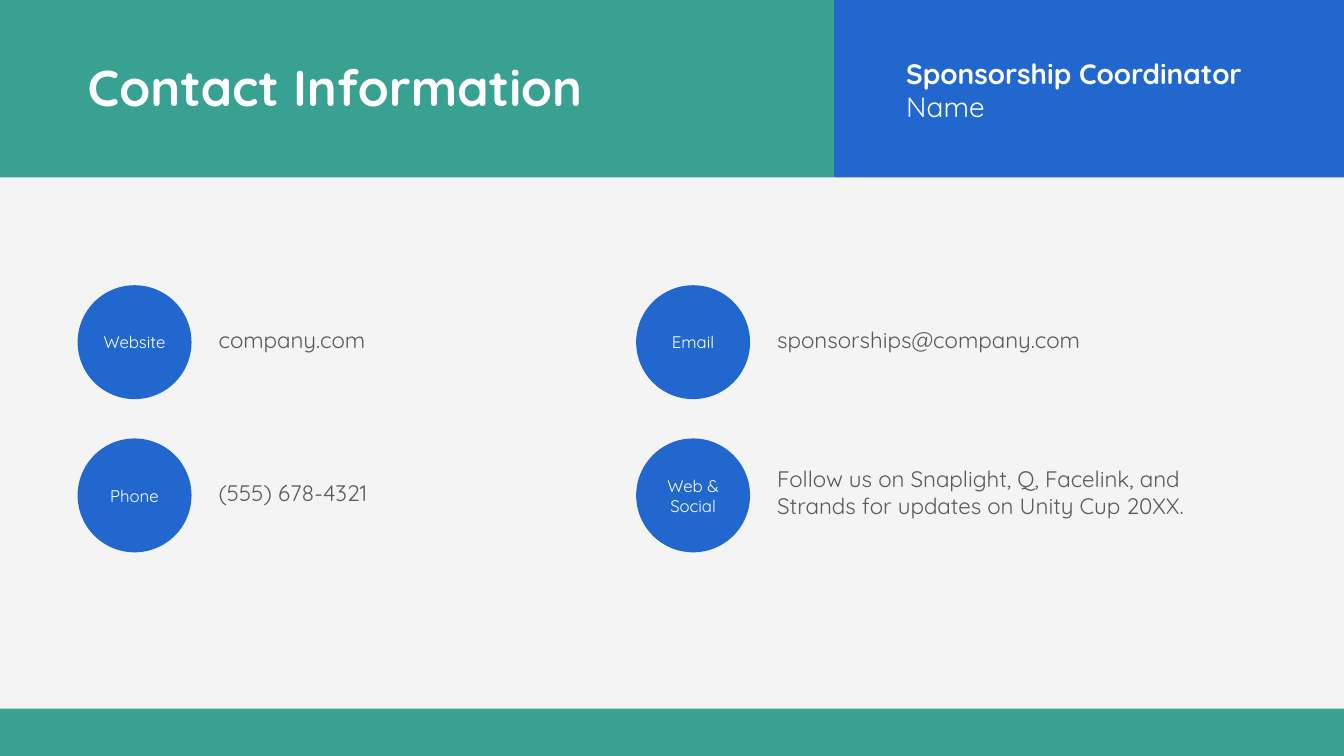
import pptx
import pptx.util
import pptx.dml.color
import pptx.enum.shapes
import pptx.enum.text
from dataclasses import dataclass

Inches = pptx.util.Inches
Shape = pptx.enum.shapes.MSO_SHAPE
Align = pptx.enum.text.PP_ALIGN
Anchor = pptx.enum.text.MSO_ANCHOR

TITLE = "Contact Information"
COORDINATOR = ["Sponsorship Coordinator", "Name"]
# label, detail, detail width; one inner list per row
CONTACTS = [
    [("Website", "company.com", 3.56),
     ("Email", "sponsorships@company.com", 5.16)],
    [("Phone", "(555) 678-4321", 2.71),
     ("Web & Social", "Follow us on Snaplight, Q, Facelink, and "
      "Strands for updates on Unity Cup 20XX.", 4.8)],
]


@dataclass(frozen=True)
class Theme:
    font: str = "Quicksand"
    background: str = "F4F4F4"
    green: str = "38A191"
    blue: str = "2167CE"
    white: str = "FFFFFF"
    gray: str = "595959"
    title: int = 36
    heading: int = 20
    detail: int = 16
    label: int = 12


THEME = Theme()
SLIDE_WIDTH, SLIDE_HEIGHT = 13.33, 7.5
HEADER_HEIGHT, FOOTER_HEIGHT = 1.76, 0.47
SPLIT = 8.27
COLUMNS = [0.77, 6.31]
FIRST_ROW, ROW_STEP = 2.83, 1.52
CIRCLE = 1.13
DETAIL_OFFSET, DETAIL_RISE = 1.3, 0.03


def rgb(value):
    return pptx.dml.color.RGBColor.from_string(value)


def write(shape, lines, size, color=THEME.white, bold=(False,),
          align=Align.LEFT, anchor=Anchor.TOP, side_inset=0.1):
    """Fill a shape with one paragraph per line; bold has a flag for each."""
    frame = shape.text_frame
    frame.word_wrap = True
    frame.vertical_anchor = anchor
    frame.margin_left = frame.margin_right = Inches(side_inset)
    frame.margin_top = frame.margin_bottom = Inches(0.05)
    for index, line in enumerate(lines):
        para = frame.paragraphs[0] if index == 0 else frame.add_paragraph()
        para.alignment = align
        para.line_spacing = 1.0
        para.space_before = pptx.util.Pt(0)
        span = para.add_run()
        span.text = line
        span.font.name = THEME.font
        span.font.size = pptx.util.Pt(size)
        span.font.bold = bold[index]
        span.font.color.rgb = rgb(color)


def add_block(page, kind, left, top, width, height, color):
    block = page.shapes.add_shape(
        kind, Inches(left), Inches(top), Inches(width), Inches(height))
    block.shadow.inherit = False
    block.fill.solid()
    block.fill.fore_color.rgb = rgb(color)
    block.line.fill.background()
    return block


def add_text(page, left, top, width, height, lines, size, **style):
    box = page.shapes.add_textbox(
        Inches(left), Inches(top), Inches(width), Inches(height))
    write(box, lines, size, **style)


def add_contact(page, left, top, label, detail, width):
    circle = add_block(page, Shape.OVAL, left, top, CIRCLE, CIRCLE, THEME.blue)
    write(circle, [label], THEME.label, align=Align.CENTER,
          anchor=Anchor.MIDDLE, side_inset=0)
    add_text(page, left + DETAIL_OFFSET, top - DETAIL_RISE, width, CIRCLE,
             [detail], THEME.detail, color=THEME.gray, anchor=Anchor.MIDDLE)


def main():
    deck = pptx.Presentation()
    deck.slide_width = Inches(SLIDE_WIDTH)
    deck.slide_height = Inches(SLIDE_HEIGHT)
    page = deck.slides.add_slide(deck.slide_layouts.get_by_name("Title Only"))
    page.background.fill.solid()
    page.background.fill.fore_color.rgb = rgb(THEME.background)

    bands = [
        (SPLIT, 0, SLIDE_WIDTH - SPLIT, HEADER_HEIGHT, THEME.blue),
        (0, 0, SPLIT, HEADER_HEIGHT, THEME.green),
        (0, SLIDE_HEIGHT - FOOTER_HEIGHT, SLIDE_WIDTH, FOOTER_HEIGHT, THEME.green),
    ]
    for band in bands:
        add_block(page, Shape.RECTANGLE, *band)

    title = page.shapes.title
    title.left, title.top = Inches(COLUMNS[0]), Inches(0.51)
    title.width, title.height = Inches(5.66), Inches(0.71)
    write(title, [TITLE], THEME.title, bold=(True,))
    # The title is created first, so bring it in front of the bands
    page.shapes.element.append(title.element)
    add_text(page, 8.89, 0.51, 3.94, 0.77, COORDINATOR, THEME.heading,
             bold=(True, False))

    for row, contacts in enumerate(CONTACTS):
        for left, contact in zip(COLUMNS, contacts):
            add_contact(page, left, FIRST_ROW + row * ROW_STEP, *contact)

    deck.save("out.pptx")


if __name__ == "__main__":
    main()
